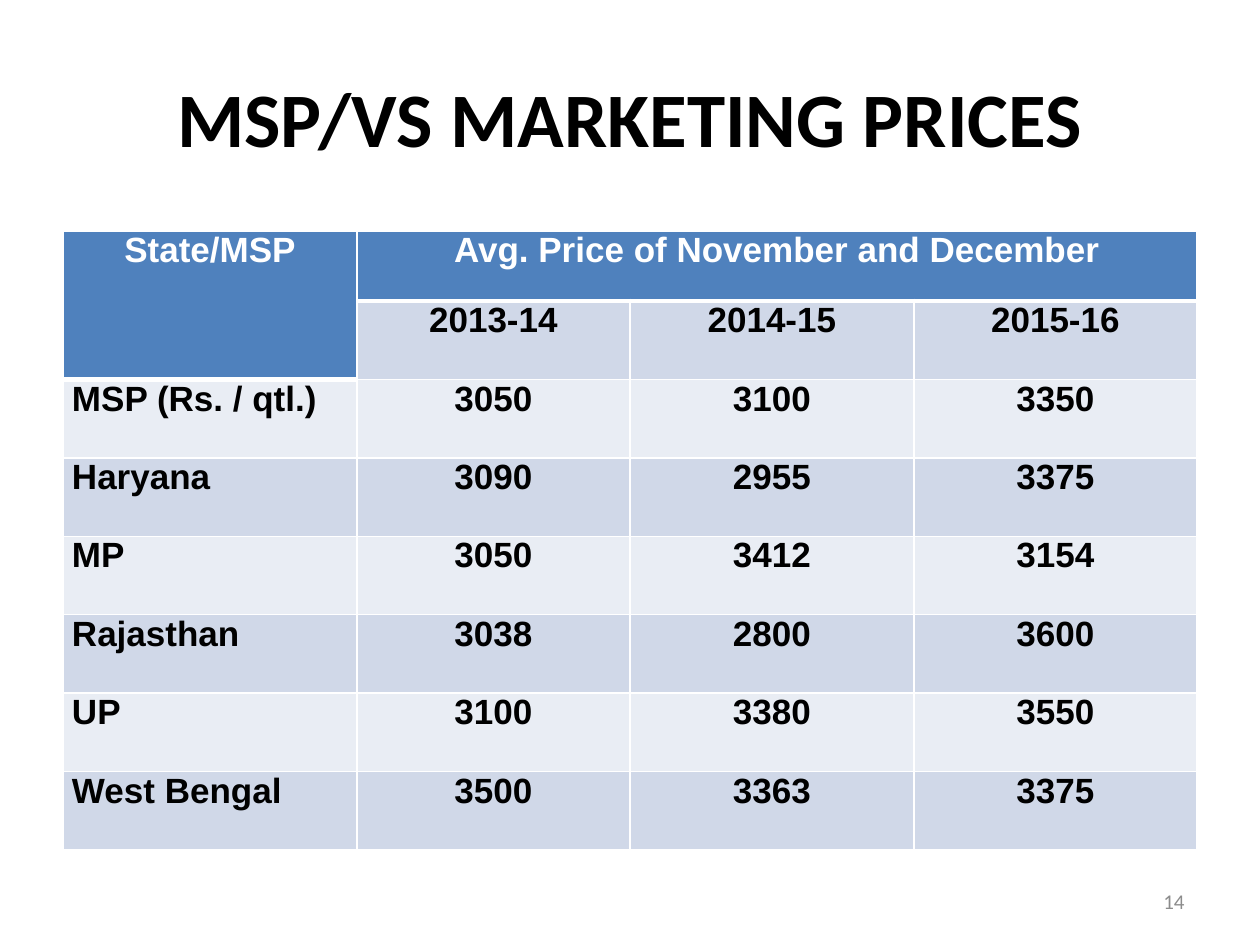
import pptx
import pptx.util
import pptx.dml.color
import pptx.enum.text
import pptx.oxml

SCALE = 914400 / 126
HEX = {
    "black": "000000",
    "white": "FFFFFF",
    "grey": "8C8C8C",
    "head": "4F81BD",
    "dark": "D0D8E8",
    "light": "E9EDF4",
}
ALIGN = pptx.enum.text.PP_ALIGN
MIDDLE = pptx.enum.text.MSO_ANCHOR.MIDDLE
NS = "http://schemas.openxmlformats.org/drawingml/2006/main"

COLS = [294, 273, 284, 283]
TOP_ROW, HEIGHT = 70, 619
ROWS = [
    ["State/MSP", "Avg. Price of November and December", None, None],
    [None, "2013-14", "2014-15", "2015-16"],
    ["MSP (Rs. / qtl.)", "3050", "3100", "3350"],
    ["Haryana", "3090", "2955", "3375"],
    ["MP", "3050", "3412", "3154"],
    ["Rajasthan", "3038", "2800", "3600"],
    ["UP", "3100", "3380", "3550"],
    ["West Bengal", "3500", "3363", "3375"],
]


def px(n):
    return pptx.util.Emu(round(n * SCALE))


def rgb(name):
    return pptx.dml.color.RGBColor.from_string(HEX[name])


def is_head(row, col):
    return row == 0 or (row == 1 and col == 0)


class Deck:
    def __init__(self, wide, high):
        self.prs = pptx.Presentation()
        self.prs.slide_width, self.prs.slide_height = px(wide), px(high)
        self.slide = self.prs.slides.add_slide(self.prs.slide_layouts[6])

    def put_text(self, frame, text, size, font, color, align, bold=False):
        frame.text = text
        para = frame.paragraphs[0]
        para.alignment = align
        for run in para.runs:
            run.font.size = pptx.util.Pt(size)
            run.font.name = font
            run.font.bold = bold
            run.font.color.rgb = rgb(color)

    def label(self, box, *style, **more):
        frame = self.slide.shapes.add_textbox(*map(px, box)).text_frame
        frame.word_wrap = True
        frame.vertical_anchor = MIDDLE
        self.put_text(frame, *style, **more)

    def edge(self, cell, side, width):
        cell._tc.get_or_add_tcPr().append(pptx.oxml.parse_xml(
            f'<a:ln{side} xmlns:a="{NS}" w="{pptx.util.Pt(width)}">'
            f'<a:solidFill><a:srgbClr val="{HEX["white"]}"/></a:solidFill>'
            f'</a:ln{side}>'))

    def cell(self, cell, text, row, col):
        head = is_head(row, col)
        under = row > 0 and is_head(row - 1, col)
        widths = {"L": 1, "R": 1, "T": 3 if under else 1, "B": 3 if head else 1}
        for side, width in widths.items():
            self.edge(cell, side, width)
        cell.fill.solid()
        cell.fill.fore_color.rgb = rgb(
            "head" if head else "dark" if row % 2 else "light")
        cell.margin_left = cell.margin_right = px(9)
        cell.margin_top = cell.margin_bottom = 0
        if text:
            align = ALIGN.CENTER if head or col else ALIGN.LEFT
            self.put_text(cell.text_frame, text, 20, "Arial",
                          "white" if head else "black", align, bold=True)

    def table(self, left, top, rows, cols):
        table = self.slide.shapes.add_table(
            len(rows), len(cols), px(left), px(top),
            px(sum(cols)), px(HEIGHT)).table
        table.first_row = table.horz_banding = False
        for col, width in zip(table.columns, cols):
            col.width = px(width)
        step = (HEIGHT - TOP_ROW) / (len(rows) - 1)
        for r, texts in enumerate(rows):
            table.rows[r].height = px(step if r else TOP_ROW)
            for c, text in enumerate(texts):
                self.cell(table.cell(r, c), text, r, c)
        table.cell(0, 0).merge(table.cell(1, 0))
        table.cell(0, 1).merge(table.cell(0, len(cols) - 1))


def main():
    deck = Deck(1260, 945)
    deck.label((63, 38, 1134, 157), "MSP/VS MARKETING PRICES", 44, "Calibri",
               "black", ALIGN.CENTER, bold=True)
    deck.table(63, 231, ROWS, COLS)
    deck.label((903, 876, 294, 50), "14", 12, "Calibri", "grey", ALIGN.RIGHT)
    deck.prs.save("out.pptx")


if __name__ == "__main__":
    main()
